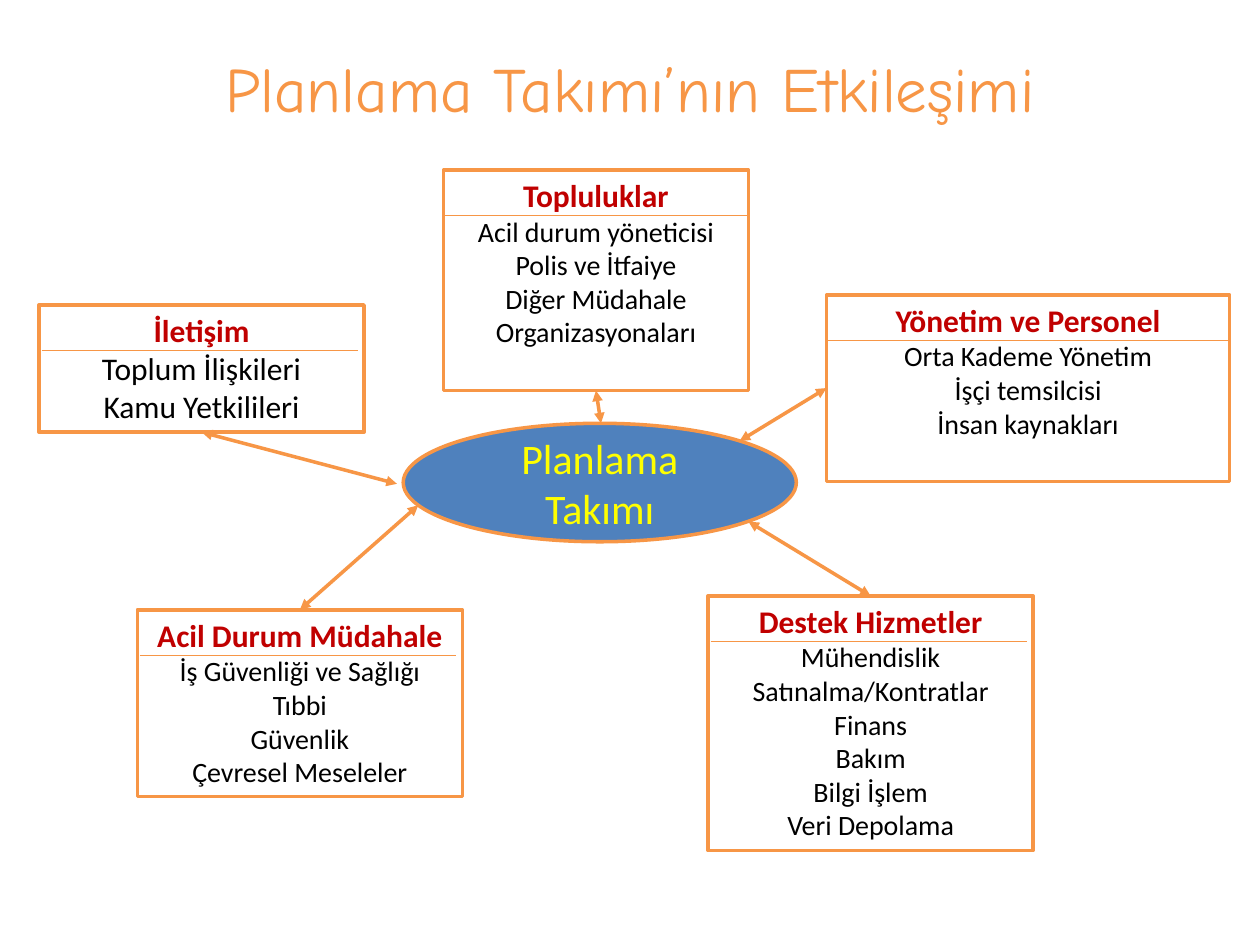
from dataclasses import dataclass

from lxml.etree import SubElement
from pptx import Presentation
from pptx.dml.color import RGBColor
from pptx.enum.shapes import MSO_CONNECTOR, MSO_SHAPE
from pptx.enum.text import MSO_ANCHOR, PP_ALIGN
from pptx.oxml.ns import qn
from pptx.util import Inches, Pt


@dataclass(frozen=True)
class Theme:
    accent: str = "F79646"
    heading: str = "C00000"
    body: str = "000000"
    box_fill: str = "FFFFFF"
    hub_fill: str = "4F81BD"
    hub_text: str = "FFFF00"
    title_font: str = "Comic Neue"
    body_font: str = "Calibri"
    title_size: int = 36
    hub_size: int = 24
    heading_size: int = 18
    body_size: int = 16
    outline: float = 2
    rule: float = 0.75


THEME = Theme()
HUB_BOX = (3.2, 3.36, 3.12, 0.94)
RULE_OFFSET = 0.36  # just below the heading line, clear of the first member


@dataclass(frozen=True)
class Group:
    """A team: its box, the rule under its heading, and the arrow to the hub."""
    heading: str
    members: tuple
    box: tuple
    rule_inset: tuple
    arrow_side: str
    hub_point: tuple
    member_size: int = THEME.body_size


GROUPS = (
    Group("Topluluklar",
          ("Acil durum yöneticisi", "Polis ve İtfaiye", "Diğer Müdahale Organizasyonaları"),
          (3.52, 1.35, 2.42, 1.75), (0, 0), "bottom", (4.77, 3.36)),
    Group("Acil Durum Müdahale",
          ("İş Güvenliği ve Sağlığı", "Tıbbi", "Güvenlik", "Çevresel Meseleler"),
          (1.09, 4.84, 2.58, 1.48), (0.02, 0.05), "top", (3.32, 4.01)),
    Group("Destek Hizmetler",
          ("Mühendislik", "Satınalma/Kontratlar", "Finans", "Bakım", "Bilgi İşlem",
           "Veri Depolama"),
          (5.62, 4.73, 2.58, 2.02), (0.02, 0.05), "top", (5.94, 4.14)),
    Group("Yönetim ve Personel",
          ("Orta Kademe Yönetim", "İşçi temsilcisi", "İnsan kaynakları"),
          (6.56, 2.34, 3.2, 1.48), (0, 0), "left", (5.87, 3.5)),
    Group("İletişim", ("Toplum İlişkileri", "Kamu Yetkilileri"),
          (0.31, 2.42, 2.58, 1.01), (0.02, 0.05), "bottom", (3.15, 3.84),
          THEME.heading_size),
)


def write(paragraph, text, *, size, color, font=THEME.body_font, bold=False):
    paragraph.alignment = PP_ALIGN.CENTER
    run = paragraph.add_run()
    run.text = text
    run.font.name = font
    run.font.size = Pt(size)
    run.font.bold = bold
    run.font.color.rgb = RGBColor.from_string(color)


def place(shape, box):
    shape.left, shape.top, shape.width, shape.height = map(Inches, box)


def add_outlined_shape(slide, kind, box, fill, anchor):
    shape = slide.shapes.add_shape(kind, *map(Inches, box))
    shape.shadow.inherit = False
    shape.fill.solid()
    shape.fill.fore_color.rgb = RGBColor.from_string(fill)
    shape.line.color.rgb = RGBColor.from_string(THEME.accent)
    shape.line.width = Pt(THEME.outline)
    shape.text_frame.word_wrap = True
    shape.text_frame.vertical_anchor = anchor
    return shape


def add_line(slide, start, end, width, arrowheads=False):
    line = slide.shapes.add_connector(MSO_CONNECTOR.STRAIGHT, *map(Inches, start + end))
    line.line.color.rgb = RGBColor.from_string(THEME.accent)
    line.line.width = Pt(width)
    if arrowheads:
        outline = line.line._get_or_add_ln()
        for tag in ("a:headEnd", "a:tailEnd"):
            SubElement(outline, qn(tag), type="triangle")
    SubElement(line._element.spPr, qn("a:effectLst"))


def add_title(slide, box):
    title = slide.shapes.title
    place(title, box)
    title.text_frame.vertical_anchor = MSO_ANCHOR.MIDDLE
    write(title.text_frame.paragraphs[0], "Planlama Takımı’nın Etkileşimi",
          size=THEME.title_size, color=THEME.accent, font=THEME.title_font)


def add_group(slide, group):
    left, top, width, _ = group.box
    shape = add_outlined_shape(slide, MSO_SHAPE.RECTANGLE, group.box, THEME.box_fill,
                               MSO_ANCHOR.TOP)
    frame = shape.text_frame
    write(frame.paragraphs[0], group.heading, size=THEME.heading_size,
          color=THEME.heading, bold=True)
    for member in group.members:
        write(frame.add_paragraph(), member, size=group.member_size, color=THEME.body)
    rule_top = top + RULE_OFFSET
    inset_left, inset_right = group.rule_inset
    add_line(slide, (left + inset_left, rule_top), (left + width - inset_right, rule_top),
             THEME.rule)


def add_hub(slide, box):
    shape = add_outlined_shape(slide, MSO_SHAPE.OVAL, box, THEME.hub_fill, MSO_ANCHOR.MIDDLE)
    write(shape.text_frame.paragraphs[0], "Planlama Takımı",
          size=THEME.hub_size, color=THEME.hub_text)


def add_arrow(slide, group):
    left, top, width, height = group.box
    start = {
        "top": (left + width / 2, top),
        "bottom": (left + width / 2, top + height),
        "left": (left, top + height / 2),
    }[group.arrow_side]
    add_line(slide, start, group.hub_point, THEME.outline, arrowheads=True)


def main():
    presentation = Presentation()
    presentation.slide_width = Inches(10)
    presentation.slide_height = Inches(7.5)
    title_only = presentation.slide_layouts.get_by_name("Title Only")
    slide = presentation.slides.add_slide(title_only)
    add_title(slide, (0.5, 0.3, 9, 0.79))
    for group in GROUPS:
        add_group(slide, group)
    add_hub(slide, HUB_BOX)
    for group in GROUPS:
        add_arrow(slide, group)
    presentation.save("out.pptx")


if __name__ == "__main__":
    main()
